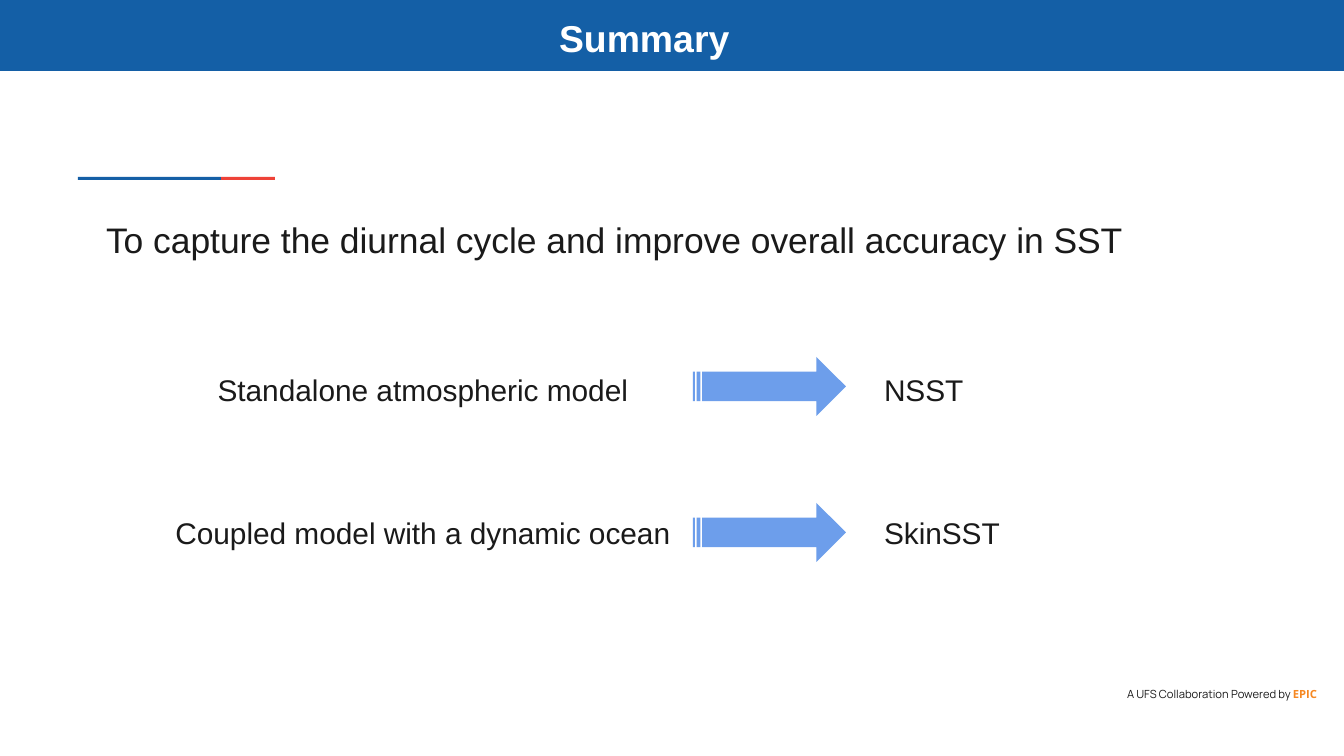
"""Build the Summary slide linking each model setup to its SST scheme."""
import dataclasses

import pptx
import pptx.dml.color
import pptx.enum.shapes
import pptx.enum.text
import pptx.oxml
import pptx.util

SCALE = 914400 / 134.4
BLUE, RED, ARROW, ORANGE = "145FA6", "EE4238", "6D9EEB", "F68822"
INK, WHITE = "1A1A1A", "FFFFFF"
INSET = 13
SHAPE = pptx.enum.shapes.MSO_SHAPE
ALIGN = pptx.enum.text.PP_ALIGN


@dataclasses.dataclass
class Box:
    left: int
    top: int
    width: int
    height: int

    def emu(self) -> list[int]:
        return [px(v) for v in dataclasses.astuple(self)]


@dataclasses.dataclass
class Mapping:
    model: str
    scheme: str
    text_top: int
    arrow_top: int


MAPPINGS = [
    Mapping("Standalone atmospheric model", "NSST", 359, 357),
    Mapping("Coupled model with a dynamic ocean", "SkinSST", 502, 503),
]


def px(value: int) -> int:
    return round(value * SCALE)


def rgb(value: str) -> pptx.dml.color.RGBColor:
    return pptx.dml.color.RGBColor.from_string(value)


def add_filled(slide, kind, box: Box, color: str):
    s = slide.shapes.add_shape(kind, *box.emu())
    s.shadow.inherit = False
    s.fill.solid()
    s.fill.fore_color.rgb = rgb(color)
    s.line.fill.background()
    return s


def add_run(p, text: str, *, size=16, font="Arial", color=INK, bold=False):
    r = p.add_run()
    r.text = text
    r.font.size = pptx.util.Pt(size)
    r.font.name = font
    r.font.color.rgb = rgb(color)
    r.font.bold = bold


def write_text(s, text: str, *, align=ALIGN.LEFT, inset=INSET, **font):
    tf = s.text_frame
    tf.word_wrap = True
    tf.auto_size = pptx.enum.text.MSO_AUTO_SIZE.NONE
    tf.vertical_anchor = pptx.enum.text.MSO_ANCHOR.TOP
    tf.margin_left = tf.margin_right = px(inset)
    tf.margin_top = tf.margin_bottom = px(inset)
    p = tf.paragraphs[0]
    p.alignment = align
    p.space_before = pptx.util.Pt(0)
    add_run(p, text, **font)
    return p


def add_text(slide, box: Box, text: str, **fmt):
    return write_text(slide.shapes.add_textbox(*box.emu()), text, **fmt)


def fill_placeholder(s, box: Box, text: str, **fmt):
    s.left, s.top, s.width, s.height = box.emu()
    return write_text(s, text, **fmt)


def remove_bullet(p):
    props = p._p.get_or_add_pPr()
    props.set("marL", "0")
    props.set("indent", "0")
    props.append(pptx.oxml.parse_xml(
        '<a:buNone xmlns:a="http://schemas.openxmlformats.org/drawingml/2006/main"/>'))


def add_mapping(slide, m: Mapping):
    add_text(slide, Box(157, m.text_top, 532, 61), m.model, align=ALIGN.CENTER)
    add_filled(slide, SHAPE.STRIPED_RIGHT_ARROW, Box(693, m.arrow_top, 153, 59), ARROW)
    add_text(slide, Box(871, m.text_top, 250, 61), m.scheme)


def main():
    prs = pptx.Presentation()
    prs.slide_width, prs.slide_height = px(1344), px(756)
    slide = prs.slides.add_slide(prs.slide_layouts[1])
    title, body = slide.placeholders

    banner = add_filled(slide, SHAPE.RECTANGLE, Box(0, 0, 1344, 71), BLUE)
    slide.shapes._spTree.insert(2, banner._element)
    add_filled(slide, SHAPE.RECTANGLE, Box(78, 177, 143, 3), BLUE)
    add_filled(slide, SHAPE.RECTANGLE, Box(221, 177, 54, 3), RED)

    fill_placeholder(title, Box(546, 2, 292, 73), "Summary",
                     size=20, color=WHITE, bold=True)
    goal = fill_placeholder(
        body, Box(93, 205, 1056, 60),
        "To capture the diurnal cycle and improve overall accuracy in SST", size=19)
    remove_bullet(goal)

    for m in MAPPINGS:
        add_mapping(slide, m)

    credit = add_text(slide, Box(1050, 687, 267, 14), "A UFS Collaboration Powered by ",
                      align=ALIGN.RIGHT, inset=0, size=6, font="Manrope")
    add_run(credit, "EPIC", size=6, font="Open Sans", color=ORANGE, bold=True)
    prs.save("out.pptx")


if __name__ == "__main__":
    main()
